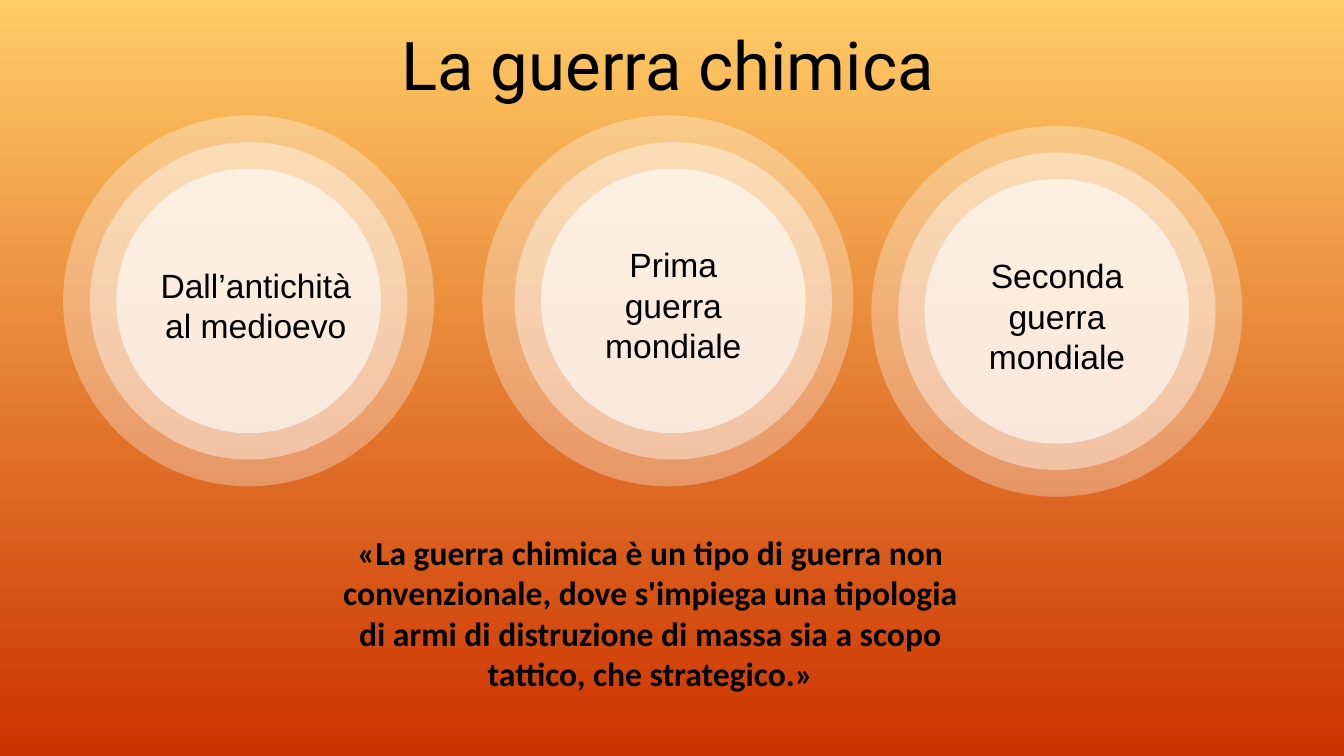
from lxml import etree
from pptx import Presentation
from pptx.dml.color import RGBColor
from pptx.enum import shapes, text
from pptx.oxml import ns
from pptx.util import Pt

COLORS = {"top": "FFCC66", "bottom": "CC3300", "disc": "FFFFFF", "text": "000000"}

# Diameter in points and opacity in percent, from the outer disc inwards
DISCS = [(198.7, 30), (170, 40), (141.8, 60)]

# Disc centres (x of each disc, shared y), then label text and box
PERIODS = [
    ((133.2, 133.2, 133.2), 161.2, "Dall’antichità al medioevo", (69.8, 138.2, 134.6, 51)),
    ((357.8, 360.7, 360.7), 161.2, "Prima guerra mondiale", (312.5, 127.4, 96.5, 72.7)),
    ((566.2, 566.2, 566.2), 166.8, "Seconda guerra mondiale", (504, 133.2, 124.6, 72.7)),
]
QUOTE = (
    "«La guerra chimica è un tipo di guerra non convenzionale, dove s'impiega una "
    "tipologia di armi di distruzione di massa sia a scopo tattico, che strategico.»"
)


def color(name):
    return RGBColor.from_string(COLORS[name])


def paint_background(slide):
    fill = slide.background.fill
    fill.gradient()
    fill.gradient_angle = 270
    for stop, name in zip(fill.gradient_stops, ("top", "bottom")):
        stop.color.rgb = color(name)


def add_disc(slide, center_x, center_y, diameter, opacity):
    """Add a translucent circle around its centre."""
    radius = diameter / 2
    disc = slide.shapes.add_shape(
        shapes.MSO_SHAPE.OVAL,
        Pt(center_x - radius), Pt(center_y - radius), Pt(diameter), Pt(diameter),
    )
    disc.shadow.inherit = False
    disc.line.fill.background()
    disc.fill.solid()
    disc.fill.fore_color.rgb = color("disc")
    rgb = disc.fill._xPr.find(".//" + ns.qn("a:srgbClr"))
    etree.SubElement(rgb, ns.qn("a:alpha"), val=str(opacity * 1000))


def add_text(slide, content, box, font_name="Arial", size=18, bold=False,
             anchor=text.MSO_ANCHOR.TOP):
    shape = slide.shapes.add_textbox(*map(Pt, box))
    frame = shape.text_frame
    frame.word_wrap = True
    frame.vertical_anchor = anchor
    frame.text = content
    paragraph = frame.paragraphs[0]
    paragraph.alignment = text.PP_ALIGN.CENTER
    font = paragraph.runs[0].font
    font.name = font_name
    font.size = Pt(size)
    font.bold = bold
    font.color.rgb = color("text")


def add_period(slide, centers_x, center_y, label, box):
    """Add the nested discs of one period and its label."""
    for center_x, (diameter, opacity) in zip(centers_x, DISCS):
        add_disc(slide, center_x, center_y, diameter, opacity)
    add_text(slide, label, box)


def main():
    presentation = Presentation()
    presentation.slide_width = Pt(720)
    presentation.slide_height = Pt(405)
    slide = presentation.slides.add_slide(presentation.slide_layouts[6])
    paint_background(slide)
    for period in PERIODS:
        add_period(slide, *period)
    add_text(slide, "La guerra chimica", (33.8, 0, 648, 67.7), "Roboto", 36,
             anchor=text.MSO_ANCHOR.MIDDLE)
    add_text(slide, QUOTE, (168.5, 281.5, 360, 116.6), "Calibri", bold=True)
    presentation.save("out.pptx")


if __name__ == "__main__":
    main()
